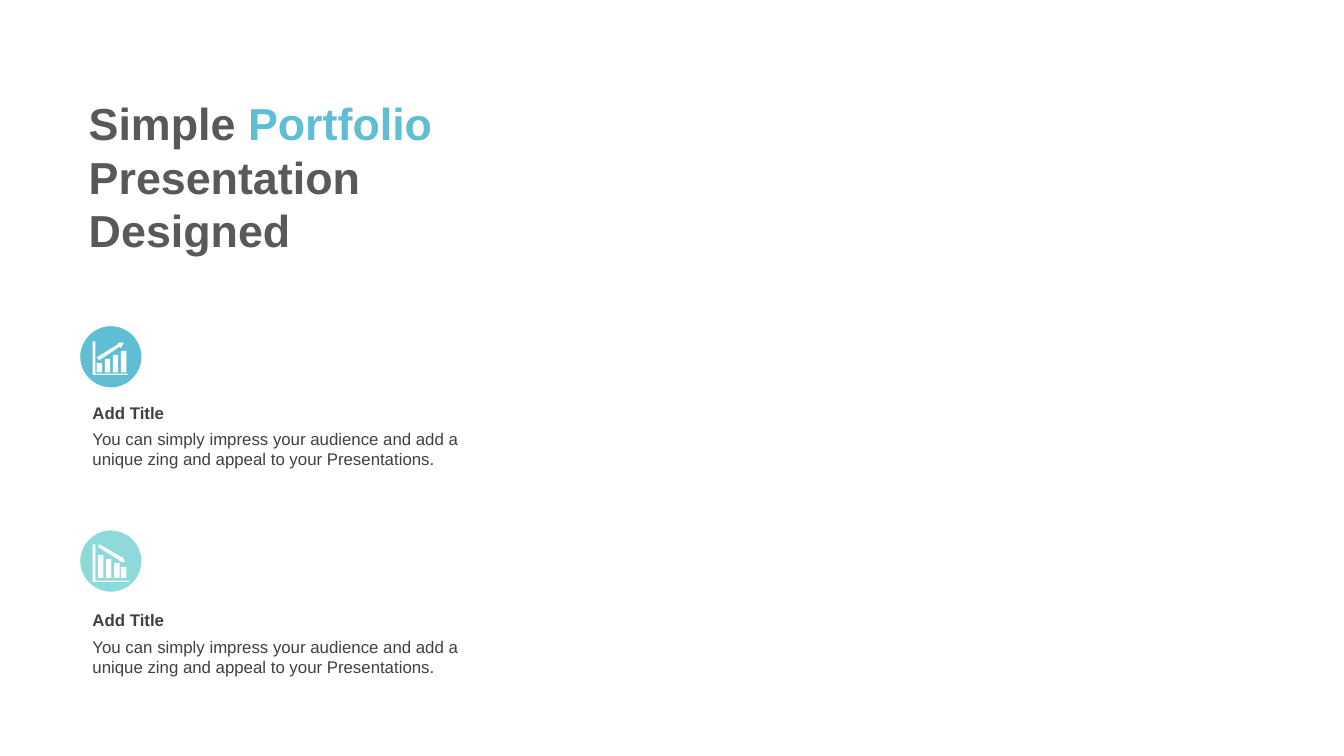
from pptx import Presentation, util as u
from pptx.dml.color import RGBColor
from pptx.enum import shapes, text

COLORS = {"blue": "60BED4", "mint": "8EDADA", "gray": "595959",
          "dark": "404040", "white": "FFFFFF"}
FONT = "Arial"
WIDTH = u.Inches(10)
HEIGHT = WIDTH * 9 // 16
LEFT, CIRCLE, TEXT_WIDTH = 0.59, 0.47, 3.16
UNIT = u.Inches(0.01)

HEADLINE = [[("Simple ", "gray"), ("Portfolio", "blue")],
            [("Presentation Designed", "gray")]]
BODY = "You can simply impress your audience and add a unique zing and appeal to your Presentations."

# Icon measures are hundredths of an inch from the corner of the circle
ITEMS = [
    {"title": "Add Title", "body": BODY, "color": "blue",
     "circle": 2.42, "title_top": 2.95, "body_top": 3.14,
     "bars": {"left": 13, "step": 6, "top": 28, "rise": -3, "bottom": 35},
     "axis": (10, 12, 36, 37),
     "arrow": [(29, 13), (33, 13), (31, 17), (30, 16), (15, 26), (13, 24), (29, 14)]},
    {"title": "Add Title", "body": BODY, "color": "mint",
     "circle": 3.94, "title_top": 4.49, "body_top": 4.69,
     "bars": {"left": 14, "step": 5.75, "top": 19, "rise": 3, "bottom": 36},
     "axis": (10, 11, 37, 39),
     "arrow": [(15, 11), (32, 21), (32, 20), (34, 24), (30, 24), (30, 23), (14, 13)]},
]


def rgb(name):
    return RGBColor.from_string(COLORS[name])


def add_text(page, at, paragraphs, size, bold=False, inset=(0.1, 0.05)):
    """Add a wrapped text box; each paragraph is a list of (words, color)."""
    frame = page.shapes.add_textbox(*map(u.Inches, at)).text_frame
    side, edge = map(u.Inches, inset)
    layout = {"word_wrap": True, "auto_size": text.MSO_AUTO_SIZE.SHAPE_TO_FIT_TEXT,
              "margin_left": side, "margin_right": side,
              "margin_top": edge, "margin_bottom": edge}
    for name, value in layout.items():
        setattr(frame, name, value)
    for index, spans in enumerate(paragraphs):
        para = frame.add_paragraph() if index else frame.paragraphs[0]
        for words, color in spans:
            span = para.add_run()
            span.text = words
            for name, value in {"name": FONT, "size": u.Pt(size), "bold": bold}.items():
                setattr(span.font, name, value)
            span.font.color.rgb = rgb(color)


def icon_outlines(bars, axis, arrow):
    """Return the closed outlines of a bar chart icon: bars, arrow and axes."""
    outlines = []
    for index in range(4):
        x = bars["left"] + index * bars["step"]
        y = bars["top"] + index * bars["rise"]
        outlines.append([(x, y), (x + 4, y), (x + 4, bars["bottom"]), (x, bars["bottom"])])
    left, top, right, bottom = axis
    corner = [(left, top), (left + 1.5, top), (left + 1.5, bottom - 1.5),
              (right, bottom - 1.5), (right, bottom), (left, bottom)]
    return outlines + [arrow, corner]


def add_icon(page, item):
    top = u.Inches(item["circle"])
    circle = page.shapes.add_shape(shapes.MSO_SHAPE.OVAL, u.Inches(LEFT), top,
                                   u.Inches(CIRCLE), u.Inches(CIRCLE))
    circle.line.color.rgb = rgb("white")
    circle.line.width = u.Pt(1)

    outlines = icon_outlines(item["bars"], item["axis"], item["arrow"])
    builder = page.shapes.build_freeform(*outlines[0][0], scale=UNIT)
    for index, points in enumerate(outlines):
        if index:
            builder.move_to(*points[0])
        builder.add_line_segments(points[1:], close=True)
    icon = builder.convert_to_shape(u.Inches(LEFT), top)
    icon.line.fill.background()

    for shape, color in ((circle, item["color"]), (icon, "white")):
        shape.shadow.inherit = False
        shape.fill.solid()
        shape.fill.fore_color.rgb = rgb(color)


def main():
    deck = Presentation()
    deck.slide_width, deck.slide_height = WIDTH, HEIGHT
    page = deck.slides.add_slide(deck.slide_layouts[6])
    add_text(page, (LEFT, 0.67, 2.78, 1.29), HEADLINE, 24, True, (0.07, 0.04))
    for item in ITEMS:
        add_icon(page, item)
        add_text(page, (LEFT, item["body_top"], TEXT_WIDTH, 0.4),
                 [[(item["body"], "dark")]], 9)
        add_text(page, (LEFT, item["title_top"], TEXT_WIDTH, 0.25),
                 [[(item["title"], "dark")]], 9, True)
    deck.save("out.pptx")


if __name__ == "__main__":
    main()
